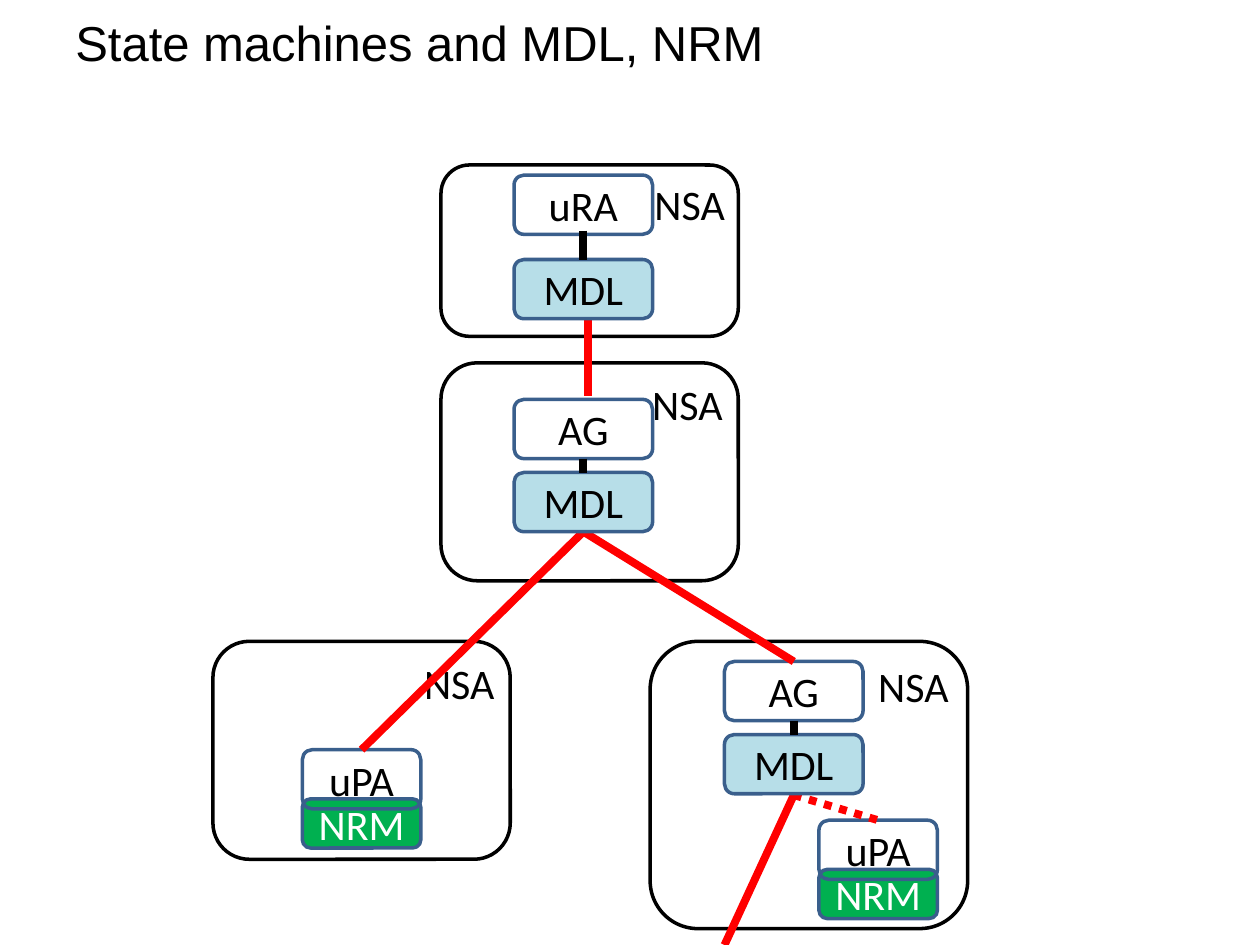
from dataclasses import dataclass

from lxml import etree
from pptx import Presentation
from pptx.dml.color import RGBColor
from pptx.enum.dml import MSO_LINE
from pptx.enum.shapes import MSO_CONNECTOR, MSO_SHAPE
from pptx.enum.text import MSO_ANCHOR, PP_ALIGN
from pptx.oxml.ns import qn
from pptx.util import Inches, Pt

ROUNDED = MSO_SHAPE.ROUNDED_RECTANGLE
STRAIGHT = MSO_CONNECTOR.STRAIGHT
DOTTED = MSO_LINE.ROUND_DOT
TOP, MIDDLE = MSO_ANCHOR.TOP, MSO_ANCHOR.MIDDLE
LEFT, CENTER, RIGHT = PP_ALIGN.LEFT, PP_ALIGN.CENTER, PP_ALIGN.RIGHT


@dataclass(frozen=True)
class Theme:
    """Colours, fonts, type sizes and line widths of the slide."""
    black: RGBColor = RGBColor(0, 0, 0)
    white: RGBColor = RGBColor(255, 255, 255)
    border: RGBColor = RGBColor.from_string("3A5F8C")
    mdl: RGBColor = RGBColor.from_string("B7DEE8")
    nrm: RGBColor = RGBColor.from_string("00B050")
    link: RGBColor = RGBColor.from_string("FF0000")
    title_font: str = "Arial"
    label_font: str = "Calibri"
    title_size: Pt = Pt(28)
    label_size: Pt = Pt(24)
    outline: Pt = Pt(2)
    link_width: Pt = Pt(4.5)


THEME = Theme()
AGENT_WIDTH, PROVIDER_WIDTH = 1.1, 0.94
BOX_HEIGHT, NRM_HEIGHT = 0.47, 0.39
ROOT_X, CHILD_X = 4.08, 5.75
ROOT_CENTER, CHILD_CENTER = ROOT_X + AGENT_WIDTH / 2, CHILD_X + AGENT_WIDTH / 2

PANELS = [
    (3.5, 1.31, 2.36, 1.36),
    (3.5, 2.88, 2.36, 1.73),
    (1.69, 5.09, 2.36, 1.73),
    (5.16, 5.09, 2.52, 2.28),
]
PROVIDERS = [(6.5, 6.51), (2.4, 5.95)]
AGENTS = [("uRA", ROOT_X, 1.39), ("AG", ROOT_X, 3.17), ("AG", CHILD_X, 5.25)]
MDLS = [(ROOT_X, 2.06), (ROOT_X, 3.75), (CHILD_X, 5.83)]
LINKS = [
    ((4.67, 2.33), (4.67, 3.14)),
    ((ROOT_CENTER, 4.22), (2.87, 5.95)),
    ((ROOT_CENTER, 4.22), (CHILD_CENTER, 5.25)),
    ((CHILD_CENTER, 6.31), (5.75, 7.5)),
]
STEMS = [(ROOT_CENTER, 1.83, 2.06), (ROOT_CENTER, 3.64, 3.75), (CHILD_CENTER, 5.72, 5.83)]


def set_text(para, text, font, size, color, align):
    """Fill a paragraph with text in one style."""
    para.text = text
    para.alignment = align
    para.font.name = font
    para.font.size = size
    para.font.color.rgb = color


def add_box(page, text, bounds, fill=None, color=THEME.black,
            border=THEME.border, align=CENTER, anchor=MIDDLE):
    """Add a labelled rounded box."""
    box = page.shapes.add_shape(ROUNDED, *map(Inches, bounds))
    box.shadow.inherit = False
    if fill is None:
        box.fill.background()
    else:
        box.fill.solid()
        box.fill.fore_color.rgb = fill
    box.line.color.rgb = border
    box.line.width = THEME.outline
    frame = box.text_frame
    frame.word_wrap = True
    frame.vertical_anchor = anchor
    frame.margin_left = frame.margin_right = Inches(0.04)
    frame.margin_top = frame.margin_bottom = Inches(0.04)
    set_text(frame.paragraphs[0], text, THEME.label_font, THEME.label_size, color, align)


def add_link(page, start, end, color=THEME.link, dash=None):
    """Add a thick straight line between two points."""
    line = page.shapes.add_connector(STRAIGHT, *map(Inches, (*start, *end)))
    line.line.color.rgb = color
    line.line.width = THEME.link_width
    if dash is not None:
        line.line.dash_style = dash
    etree.SubElement(line._element.spPr, qn("a:effectLst"))


def add_title(page, text):
    """Add the slide heading."""
    box = page.shapes.add_textbox(Inches(0.5), Inches(0.05), Inches(9), Inches(1.18))
    frame = box.text_frame
    frame.word_wrap = True
    frame.vertical_anchor = TOP
    para = frame.paragraphs[0]
    set_text(para, text, THEME.title_font, THEME.title_size, THEME.black, LEFT)
    para.space_before = Pt(4)


def main():
    """Build the slide and save the deck."""
    deck = Presentation()
    deck.slide_width, deck.slide_height = Inches(10), Inches(7.5)
    page = deck.slides.add_slide(deck.slide_layouts[6])
    for bounds in PANELS:
        add_box(page, "NSA", bounds, border=THEME.black, align=RIGHT, anchor=TOP)
    for x, y in PROVIDERS:
        add_box(page, "NRM", (x, y + 0.39, PROVIDER_WIDTH, NRM_HEIGHT), THEME.nrm, THEME.white)
        add_box(page, "uPA", (x, y, PROVIDER_WIDTH, BOX_HEIGHT))
    for name, x, y in AGENTS:
        add_box(page, name, (x, y, AGENT_WIDTH, BOX_HEIGHT))
    for start, end in LINKS:
        add_link(page, start, end)
    add_title(page, "State machines and MDL, NRM")
    add_link(page, (CHILD_CENTER, 6.31), (6.97, 6.51), dash=DOTTED)
    for x, y in MDLS:
        add_box(page, "MDL", (x, y, AGENT_WIDTH, BOX_HEIGHT), THEME.mdl)
    for x, top, bottom in STEMS:
        add_link(page, (x, top), (x, bottom), THEME.black)
    deck.save("out.pptx")


if __name__ == "__main__":
    main()
